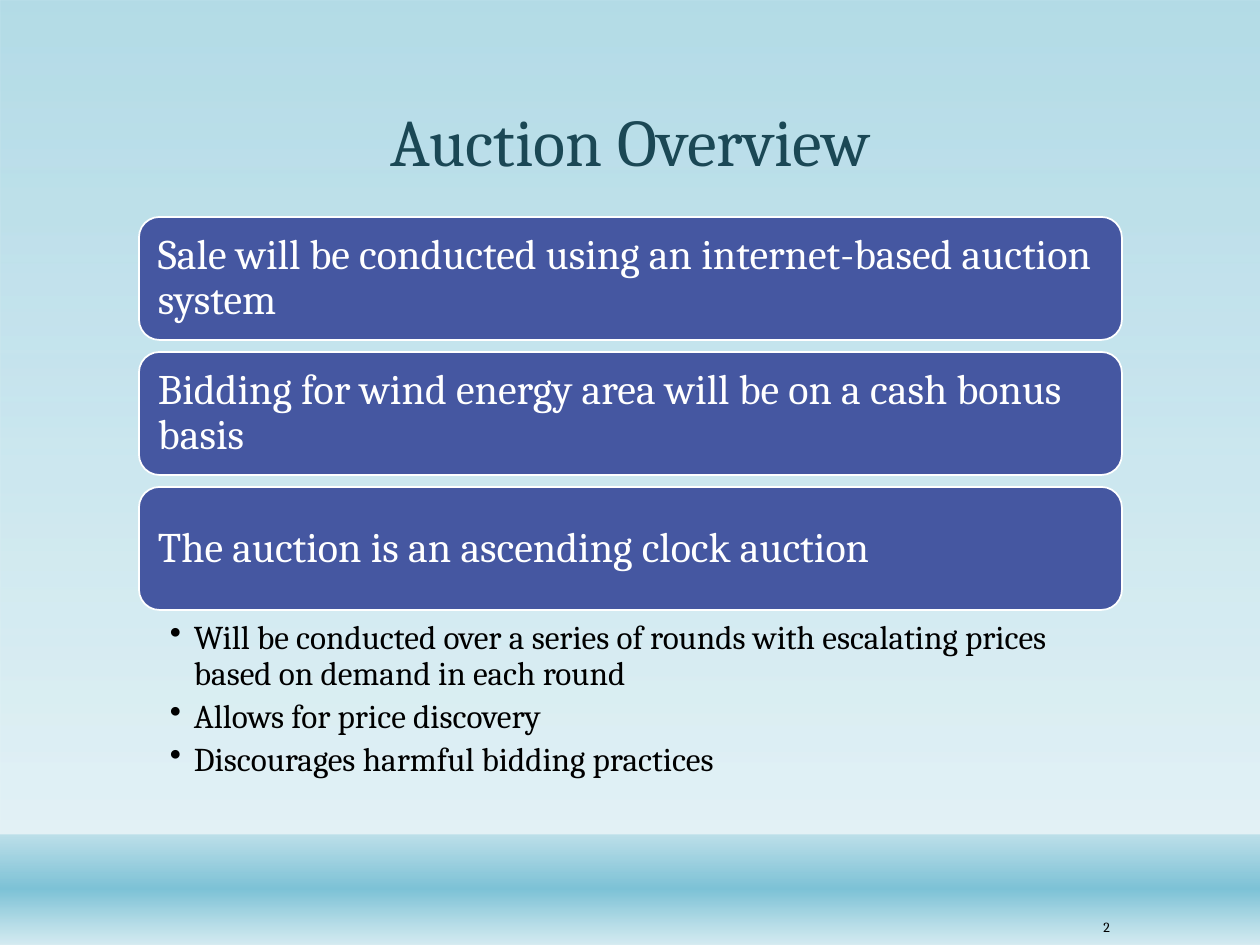
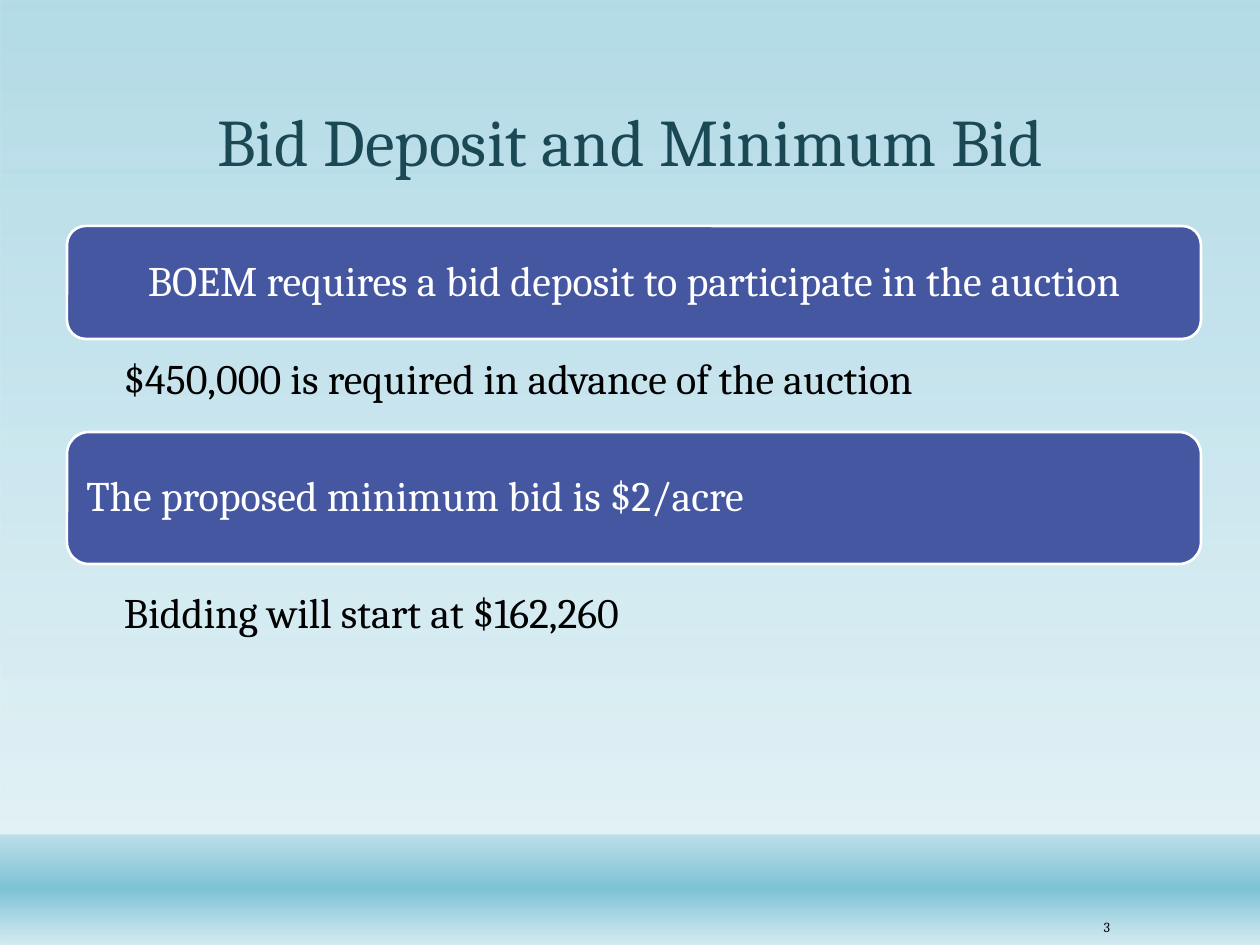
from lxml.etree import SubElement as Sub
from pptx import Presentation
from pptx.dml.color import RGBColor as RGB
from pptx.enum.shapes import MSO_SHAPE as Kind
from pptx.enum.text import MSO_ANCHOR as Anchor, PP_ALIGN as Align
from pptx.oxml.ns import qn
from pptx.util import Emu, Pt

# Shared style
FONT = "Cambria"
TEAL = RGB(0x7D, 0xC2, 0xD6)
PALE = RGB(0xD4, 0xEB, 0xF1)
DARK = RGB(0x1B, 0x48, 0x55)
BLUE = RGB(0x45, 0x57, 0xA1)
WHITE = RGB(0xFF, 0xFF, 0xFF)
BLACK = RGB(0, 0, 0)
SCALE = 914400 / 126
WIDE, HIGH = 1260, 945

# Gradient stops: position, colour, opacity (all in percent)
SKY = [(0, TEAL, 58), (88, PALE, 65)]
BAND = [(1, TEAL, 38), (49, TEAL, 100), (100, PALE, 89)]


def px(num):
    return Emu(round(num * SCALE))


def write(frame, text, size=24, color=BLACK, align=Align.LEFT, anchor=Anchor.TOP,
          inset=(13, 6, 13, 6), line=0.9, after=0, bullet=0):
    """Fill a frame, one paragraph per line of text; bullet is the hanging indent."""
    frame.word_wrap = True
    frame.vertical_anchor = anchor
    (frame.margin_left, frame.margin_top,
     frame.margin_right, frame.margin_bottom) = map(px, inset)
    for i, words in enumerate(text.split("\n")):
        para = frame.add_paragraph() if i else frame.paragraphs[0]
        para.alignment = align
        para.line_spacing = line
        para.space_after = Pt(after)
        if bullet:
            props = para._p.get_or_add_pPr()
            props.set("marL", str(px(bullet)))
            props.set("indent", str(-px(bullet)))
            Sub(props, qn("a:buChar"), char="•")
        run = para.add_run()
        run.text = words
        run.font.name = FONT
        run.font.size = Pt(size)
        run.font.color.rgb = color


class Deck:
    def __init__(self):
        self.prs = Presentation()
        self.prs.slide_width, self.prs.slide_height = px(WIDE), px(HIGH)
        self.slide = None

    def start(self, title, number):
        """Add a slide with its backdrop, title and page number."""
        self.slide = self.prs.slides.add_slide(self.prs.slide_layouts[6])
        self.fade(0, 0, WIDE, HIGH, SKY)
        self.fade(0, 835, WIDE, 110, BAND)
        self.text(139, 37, 983, 150, title, size=38, color=DARK,
                  align=Align.CENTER, anchor=Anchor.BOTTOM)
        self.text(1056, 910, 67, 33, str(number), size=8, line=1,
                  align=Align.RIGHT, anchor=Anchor.MIDDLE)

    def shape(self, kind, x, y, w, h):
        item = self.slide.shapes.add_shape(kind, px(x), px(y), px(w), px(h))
        item.shadow.inherit = False
        return item

    def fade(self, x, y, w, h, stops):
        """Rectangle with a gradient that runs from top to bottom."""
        item = self.shape(Kind.RECTANGLE, x, y, w, h)
        item.line.fill.background()
        item.fill.gradient()
        item.fill.gradient_angle = 270
        marks = item._element.spPr.find(qn("a:gradFill")).find(qn("a:gsLst"))
        marks.clear()
        for spot, color, alpha in stops:
            mark = Sub(marks, qn("a:gs"), pos=str(spot * 1000))
            tone = Sub(mark, qn("a:srgbClr"), val=str(color))
            Sub(tone, qn("a:alpha"), val=str(alpha * 1000))

    def box(self, x, y, w, h, text, edge=1, align=Align.LEFT):
        """Rounded blue box with a white edge."""
        item = self.shape(Kind.ROUNDED_RECTANGLE, x, y, w, h)
        item.fill.solid()
        item.fill.fore_color.rgb = BLUE
        item.line.color.rgb = WHITE
        item.line.width = Pt(edge)
        write(item.text_frame, text, color=WHITE, align=align,
              anchor=Anchor.MIDDLE, inset=(13, 13, 13, 13))

    def text(self, x, y, w, h, text, **style):
        item = self.slide.shapes.add_textbox(px(x), px(y), px(w), px(h))
        write(item.text_frame, text, **style)


def main():
    deck = Deck()

    # Auction overview: three stacked boxes and a list
    deck.start("Auction Overview", 2)
    points = ["Sale will be conducted using an internet-based auction system",
              "Bidding for wind energy area will be on a cash bonus basis",
              "The auction is an ascending clock auction"]
    for i, point in enumerate(points):
        deck.box(139, 217 + 135 * i, 983, 123, point)
    deck.text(139, 617, 983, 161,
              "Will be conducted over a series of rounds with escalating prices "
              "based on demand in each round\n"
              "Allows for price discovery\n"
              "Discourages harmful bidding practices",
              size=19, inset=(31, 4, 24, 4), after=4, bullet=24)

    # Deposit and minimum bid: each box with a detail below
    deck.start("Bid Deposit and Minimum Bid", 3)
    rules = [(226, 113, "BOEM requires a bid deposit to participate in the auction",
              Align.CENTER, 353, "$450,000 is required in advance of the auction"),
             (432, 132, "The proposed minimum bid is $2/acre",
              Align.LEFT, 587, "Bidding will start at $162,260")]
    for top, high, rule, align, low, detail in rules:
        deck.box(67, top, 1134, high, rule, edge=1.5, align=align)
        deck.text(82, low, 1134, 68, detail, inset=(42, 5, 25, 5))

    deck.prs.save("out.pptx")


if __name__ == "__main__":
    main()
